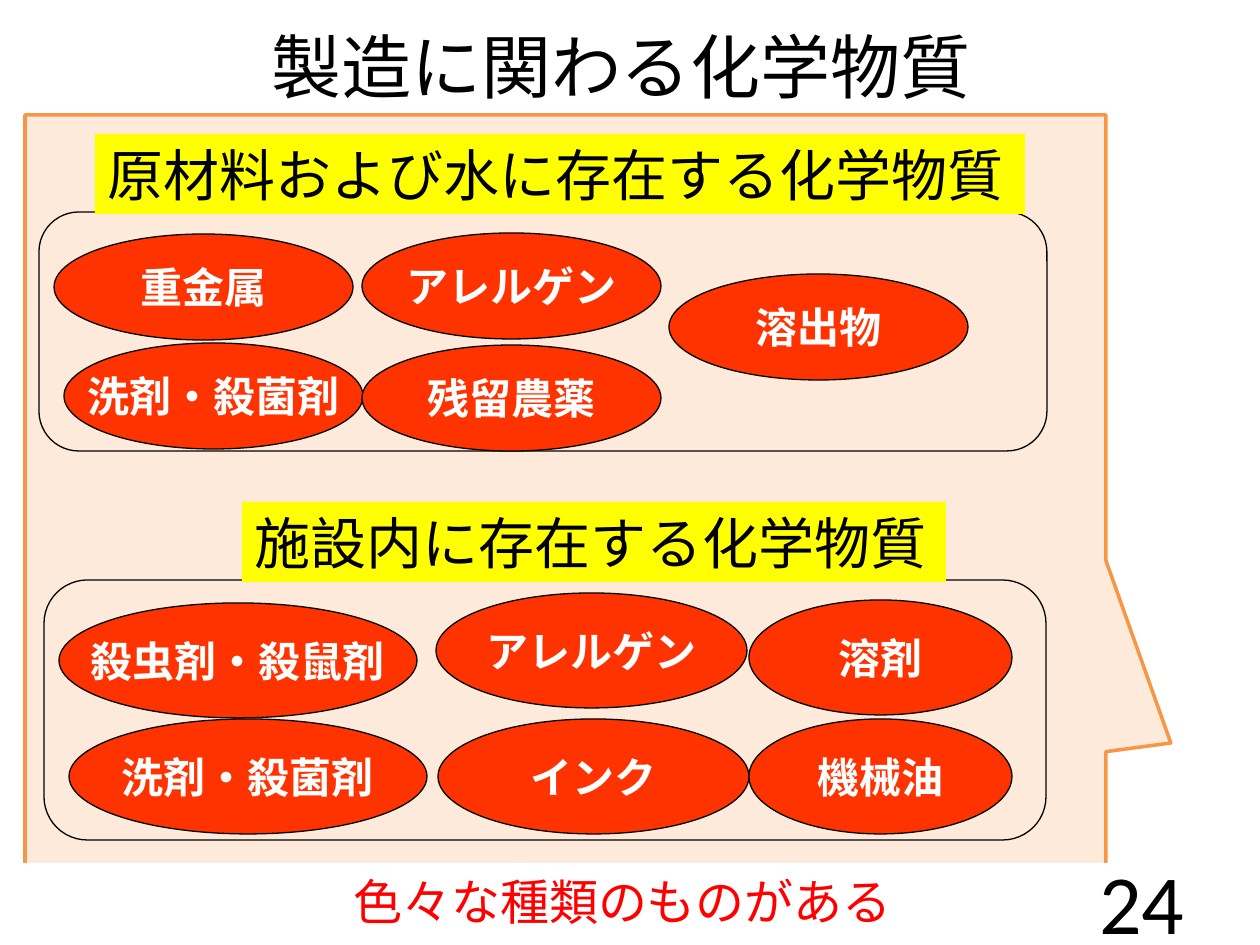
from pptx import Presentation, util as u
from pptx.dml.color import RGBColor
from pptx.enum import shapes, text

PX = 914400 // 126
BLACK = RGBColor(0, 0, 0)
WHITE = RGBColor(255, 255, 255)
RED = RGBColor(255, 0, 0)
ORANGE_RED = RGBColor(0xFF, 0x33, 0x00)
YELLOW = RGBColor(255, 255, 0)
PEACH = RGBColor(0xFD, 0xEA, 0xDA)
ORANGE = RGBColor(0xF7, 0x96, 0x46)

TITLE = "製造に関わる化学物質"
SUMMARY = "色々な種類のものがある"
PAGE = "24"
PANELS = [
    dict(label="原材料および水に存在する化学物質", label_box=(95, 134, 930, 80),
         frame=(39, 212, 1008, 239), height=106,
         items=[("重金属", 54, 234, 299), ("洗剤・殺菌剤", 64, 343, 299),
                ("アレルゲン", 362, 233, 299), ("残留農薬", 362, 345, 299),
                ("溶出物", 669, 274, 299)]),
    dict(label="施設内に存在する化学物質", label_box=(242, 502, 704, 80),
         frame=(44, 580, 1002, 260), height=115,
         items=[("殺虫剤・殺鼠剤", 59, 603, 358), ("洗剤・殺菌剤", 69, 719, 358),
                ("アレルゲン", 436, 593, 311), ("インク", 438, 719, 311),
                ("溶剤", 749, 600, 263), ("機械油", 749, 719, 263)]),
]


def emu(box):
    return [v * PX for v in box]


def add_shape(s, kind, box, fill=None, line=None, width=0.75):
    sp = s.shapes.add_shape(kind, *emu(box))
    sp.shadow.inherit = False
    if fill is None:
        sp.fill.background()
    else:
        sp.fill.solid()
        sp.fill.fore_color.rgb = fill
    if line is None:
        sp.line.fill.background()
    else:
        sp.line.color.rgb = line
        sp.line.width = u.Pt(width)
    return sp


def put_text(sp, words, size, color=BLACK, font="Arial", bold=False, wrap=True,
             align=text.PP_ALIGN.CENTER, anchor=text.MSO_ANCHOR.MIDDLE):
    tf = sp.text_frame
    tf.auto_size = text.MSO_AUTO_SIZE.NONE
    tf.word_wrap = wrap
    tf.vertical_anchor = anchor
    p = tf.paragraphs[0]
    p.alignment = align
    r = p.add_run()
    r.text = words
    r.font.size = u.Pt(size)
    r.font.name = font
    r.font.bold = bold
    r.font.color.rgb = color


def add_panel(s, panel):
    kinds = shapes.MSO_SHAPE
    add_shape(s, kinds.ROUNDED_RECTANGLE, panel["frame"], line=BLACK)
    for words, x, y, w in panel["items"]:
        sp = add_shape(s, kinds.OVAL, (x, y, w, panel["height"]), ORANGE_RED, BLACK)
        put_text(sp, words, 24, WHITE, bold=True, wrap=False)
    sp = add_shape(s, kinds.RECTANGLE, panel["label_box"], YELLOW)
    put_text(sp, panel["label"], 32, wrap=False,
             align=text.PP_ALIGN.LEFT, anchor=text.MSO_ANCHOR.TOP)


def main():
    prs = Presentation()
    prs.slide_width, prs.slide_height = u.Inches(10), u.Inches(7.5)
    s = prs.slides.add_slide(prs.slide_layouts[5])

    title = s.shapes.title
    title.left, title.top, title.width, title.height = emu((54, 6, 1134, 118))
    put_text(title, TITLE, 40)

    callout = add_shape(s, shapes.MSO_SHAPE.RECTANGULAR_CALLOUT,
                        (25, 115, 1081, 764), PEACH, ORANGE, 2)
    callout.adjustments[0] = 0.56
    callout.adjustments[1] = 0.322

    for panel in PANELS:
        add_panel(s, panel)

    footer = add_shape(s, shapes.MSO_SHAPE.RECTANGLE, (-5, 863, 1255, 76), WHITE)
    put_text(footer, SUMMARY, 28, RED)
    number = s.shapes.add_textbox(*emu((903, 876, 294, 50)))
    put_text(number, PAGE, 48, font="Calibri", align=text.PP_ALIGN.RIGHT)

    prs.save("out.pptx")


if __name__ == "__main__":
    main()
